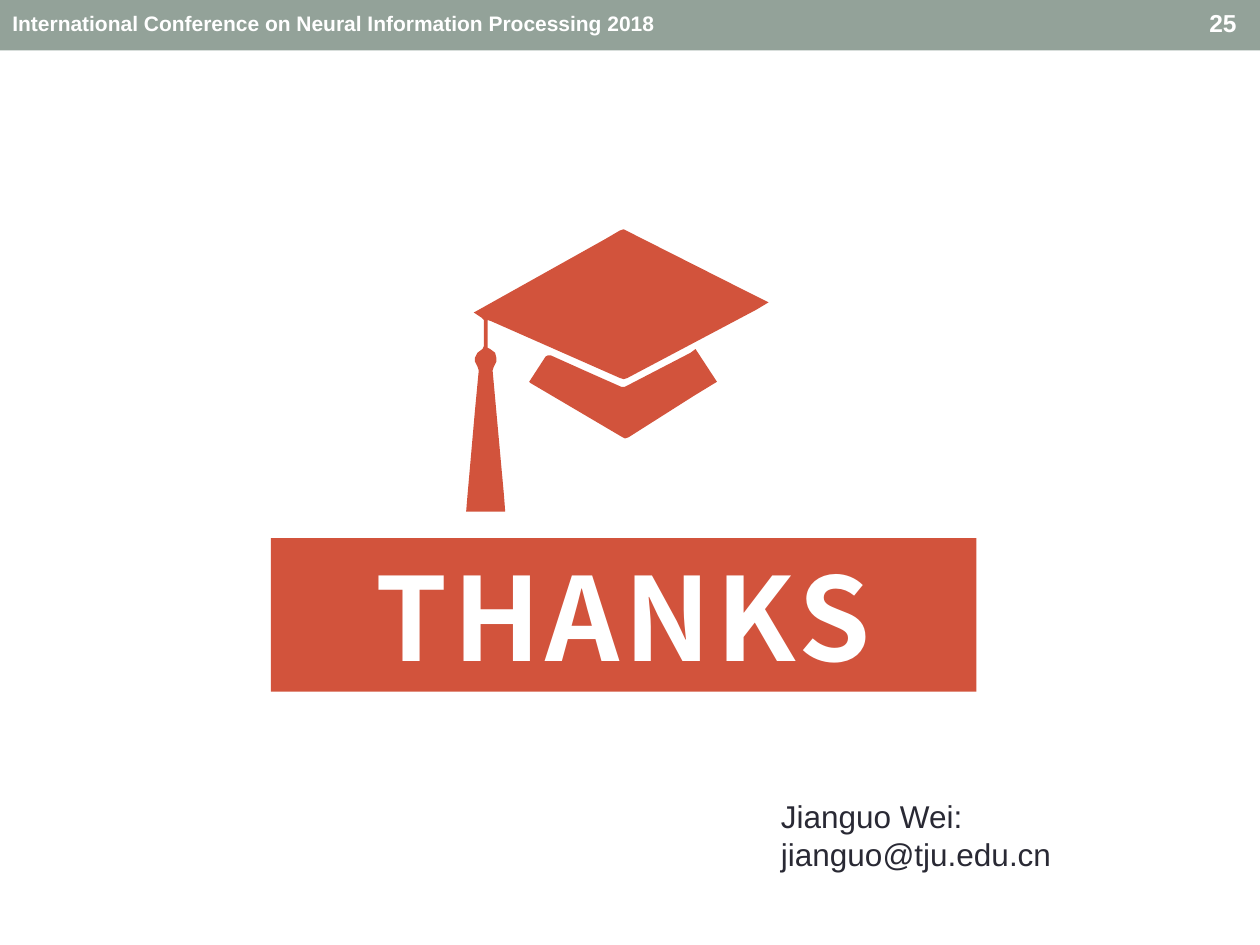
from pptx import Presentation
from pptx import util as u
from pptx.dml.color import RGBColor
from pptx.enum import shapes, text

prs = Presentation()
prs.slide_width, prs.slide_height = u.Inches(10), u.Inches(7.5)
cell = prs.slide_width // 100
s = prs.slides.add_slide(prs.slide_layouts[5])


def paint(sp, color):
    sp.fill.solid()
    sp.fill.fore_color.rgb = RGBColor.from_string(color)
    sp.line.fill.background()


def write(sp, lines, size, color, font="Arial", bold=False, align="LEFT", anchor="MIDDLE", spacing=0):
    tf = sp.text_frame
    tf.word_wrap = True
    tf.auto_size = text.MSO_AUTO_SIZE.NONE
    tf.vertical_anchor = text.MSO_ANCHOR[anchor]
    tf.text = lines
    for p in tf.paragraphs:
        p.alignment = text.PP_ALIGN[align]
        for r in p.runs:
            r.font.name, r.font.size, r.font.bold = font, u.Pt(size), bold
            r.font.color.rgb = RGBColor.from_string(color)
            if spacing:
                r.font._element.set("spc", str(spacing * 100))


bar = s.shapes.add_shape(shapes.MSO_SHAPE.RECTANGLE, 0, 0, prs.slide_width, 4 * cell)
bar.shadow.inherit = False
paint(bar, "93A299")

title = s.shapes.title
title.left, title.top, title.width, title.height = [int(n * cell) for n in (21.5, 42.7, 56, 12.2)]
paint(title, "D2533C")
write(title, "THANKS", 66, "FFFFFF", font="Noto Sans CJK SC", bold=True, align="CENTER", spacing=3)

board_and_tassel = [
    (387, 254), (387, 276), (389, 277), (393, 280), (394, 284), (394, 287), (392, 291), (391, 294),
    (396, 349), (400, 393), (401, 406), (370, 406), (371, 394), (377, 326), (380, 294), (379, 291),
    (377, 287), (377, 284), (379, 280), (383, 277), (384, 275), (384, 254), (382, 252), (376, 248),
    (378, 247), (480, 190), (492, 183), (495, 182), (497, 183), (592, 231), (610, 240), (600, 246),
    (498, 300), (495, 301), (492, 300), (390, 255),
]
cap_base = [
    (420, 303), (433, 283), (435, 282), (437, 282), (466, 295), (493, 307), (496, 307), (548, 280),
    (552, 277), (569, 303), (551, 314), (499, 347), (496, 348), (494, 347), (421, 304),
]
cap = s.shapes.add_group_shape()
for outline in (board_and_tassel, cap_base):
    fb = cap.shapes.build_freeform(*outline[0], scale=cell / 10)
    fb.add_line_segments(outline[1:], close=True)
    sp = fb.convert_to_shape()
    sp.shadow.inherit = False
    paint(sp, "D2533C")

labels = [
    ((95, 0, 5, 3.6), "25", dict(size=14, color="FFFFFF", bold=True)),
    ((0, 0, 67.4, 3.6), "International Conference on Neural Information Processing 2018",
     dict(size=12, color="FFFFFF", bold=True)),
    ((61, 62.8, 45, 7.1), "Jianguo Wei:\njianguo@tju.edu.cn", dict(size=18, color="292934", anchor="TOP")),
]
for box, words, style in labels:
    write(s.shapes.add_textbox(*[int(n * cell) for n in box]), words, **style)

prs.save("out.pptx")
